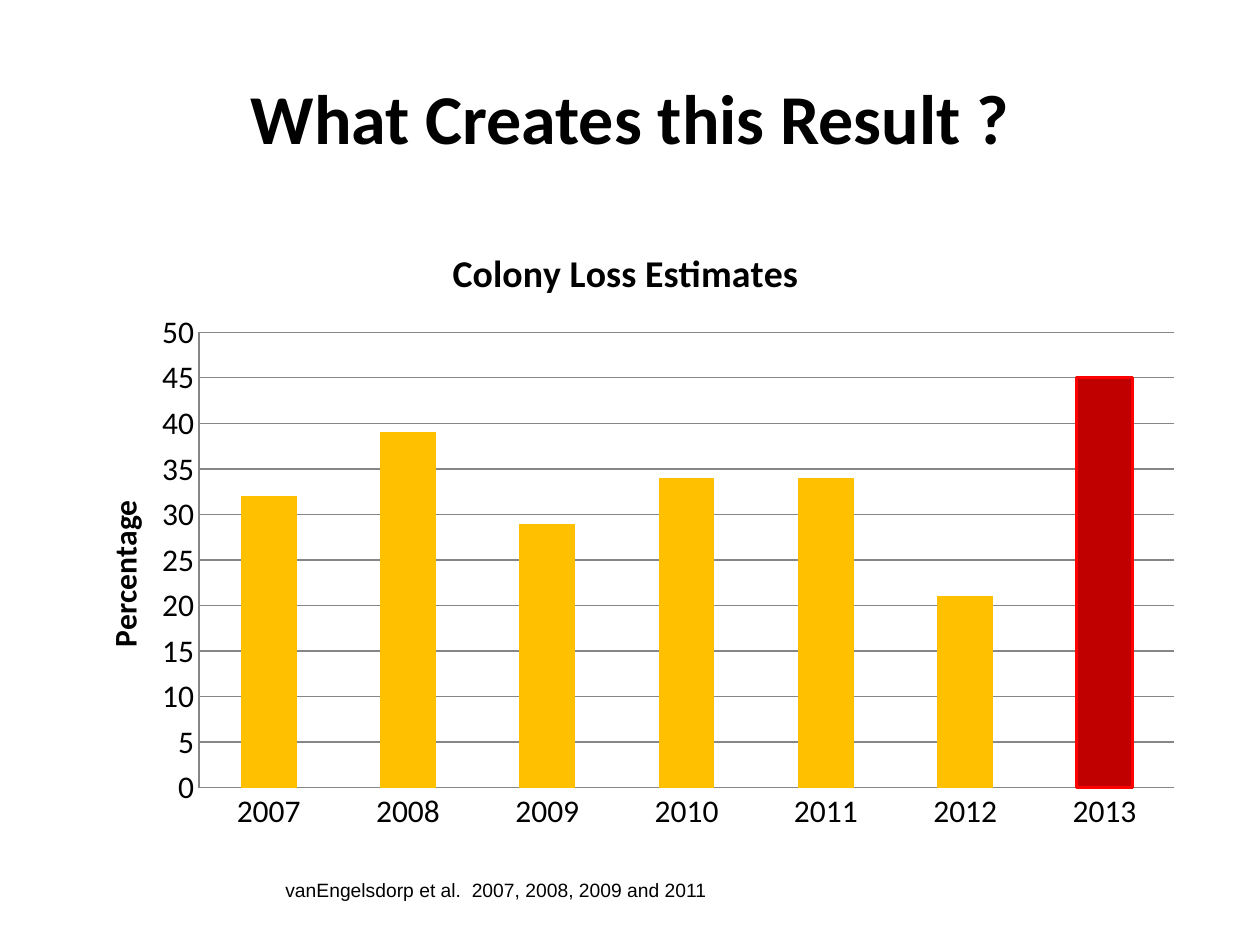
from lxml.etree import SubElement
from pptx import Presentation
from pptx.chart.data import CategoryChartData
from pptx.dml.color import RGBColor
from pptx.enum.chart import XL_CHART_TYPE, XL_TICK_MARK
from pptx.enum.text import MSO_ANCHOR, MSO_AUTO_SIZE, PP_ALIGN
from pptx.oxml.ns import qn
from pptx.util import Emu, Pt

PX_PER_INCH = 126
COLORS = {"text": "000000", "bar": "FFC000", "highlight": "C00000",
          "outline": "FF0000", "grid": "868686"}
LOSSES = {"2007": 32, "2008": 39, "2009": 29, "2010": 34,
          "2011": 34, "2012": 21, "2013": 45}


def px(length):
    """Turn pixels into EMU."""
    return Emu(round(length * 914400 / PX_PER_INCH))


def color(name):
    """Look up a palette colour."""
    return RGBColor.from_string(COLORS[name])


def style_font(font, name, size, bold=False):
    """Set typeface, size, weight and the text colour."""
    font.name = name
    font.size = Pt(size)
    font.bold = bold
    font.color.rgb = color("text")


def place_part(element, index, **fractions):
    """Give a chart part a manual layout in fractions of the chart."""
    for old_layout in element.findall(qn("c:layout")):
        element.remove(old_layout)
    layout = SubElement(element, qn("c:layout"))
    element.insert(index, layout)
    manual = SubElement(layout, qn("c:manualLayout"))
    if "w" in fractions:
        SubElement(manual, qn("c:layoutTarget")).set("val", "inner")
    for axis in "xy":
        SubElement(manual, qn(f"c:{axis}Mode")).set("val", "edge")
    for key, value in fractions.items():
        SubElement(manual, qn(f"c:{key}")).set("val", str(value))


def add_title(slide, text):
    """Fill and format the title placeholder."""
    title = slide.shapes.title
    title.left, title.top, title.width, title.height = map(px, (63, 38, 1134, 157))
    title.text_frame.text = text
    title.text_frame.vertical_anchor = MSO_ANCHOR.MIDDLE
    paragraph = title.text_frame.paragraphs[0]
    paragraph.alignment = PP_ALIGN.CENTER
    style_font(paragraph.font, "Calibri", 40, True)


def set_chart_title(owner, text, size):
    """Title a chart or an axis in bold."""
    frame = owner.text_frame
    frame.text = text
    style_font(frame.paragraphs[0].font, "Calibri", size, True)


def style_axis(axis):
    """Draw an axis as a thin grey line without ticks."""
    axis.major_tick_mark = XL_TICK_MARK.NONE
    axis.minor_tick_mark = XL_TICK_MARK.NONE
    axis.format.line.color.rgb = color("grid")
    axis.format.line.width = Pt(0.75)


def color_bars(series):
    """Paint the bars, with the last one highlighted."""
    last = len(LOSSES) - 1
    for index in range(len(LOSSES)):
        bar = series.points[index].format
        bar.fill.solid()
        bar.fill.fore_color.rgb = color("highlight" if index == last else "bar")
    bar.line.color.rgb = color("outline")
    bar.line.width = Pt(1.5)


def add_loss_chart(slide):
    """Add the column chart of yearly colony losses."""
    data = CategoryChartData()
    data.categories = list(LOSSES)
    data.add_series("Series 1", LOSSES.values())
    chart = slide.shapes.add_chart(XL_CHART_TYPE.COLUMN_CLUSTERED, px(63), px(220),
                                   px(1134), px(624), data).chart
    style_font(chart.font, "Calibri", 18)
    chart.has_legend = False
    set_chart_title(chart.chart_title, "Colony Loss Estimates ", 21.6)
    chart.chart_title.include_in_layout = False

    value_axis = chart.value_axis
    style_axis(chart.category_axis)
    style_axis(value_axis)
    value_axis.minimum_scale, value_axis.maximum_scale = 0, 50
    value_axis.major_unit = 5
    value_axis.major_gridlines.format.line.color.rgb = color("grid")
    value_axis.major_gridlines.format.line.width = Pt(0.75)
    set_chart_title(value_axis.axis_title, "Percentage", 18)
    axis_title = value_axis.axis_title.text_frame
    axis_title._txBody.find(qn("a:bodyPr")).set("rot", "-5400000")

    plot = chart.plots[0]
    plot.gap_width = 150
    plot.vary_by_categories = False
    color_bars(plot.series[0])
    plot_area = chart._chartSpace.find(f".//{qn('c:plotArea')}")
    place_part(plot_area, 0, x=0.12, y=0.18, w=0.86, h=0.73)
    place_part(plot_area.find(f".//{qn('c:title')}"), 1, x=0.03, y=0.44)


def add_citation(slide, text):
    """Add the source line below the chart."""
    box = slide.shapes.add_textbox(px(273), px(872), px(451), px(36))
    frame = box.text_frame
    frame.word_wrap = True
    frame.auto_size = MSO_AUTO_SIZE.SHAPE_TO_FIT_TEXT
    frame.text = text
    style_font(frame.paragraphs[0].font, "Arial", 11)


def main():
    """Build and save the slide."""
    presentation = Presentation()
    presentation.slide_width, presentation.slide_height = px(1260), px(945)
    slide = presentation.slides.add_slide(presentation.slide_layouts[5])
    add_title(slide, "What Creates this Result ?")
    add_loss_chart(slide)
    add_citation(slide, "vanEngelsdorp et al.  2007, 2008, 2009 and 2011")
    presentation.save("out.pptx")


if __name__ == "__main__":
    main()
